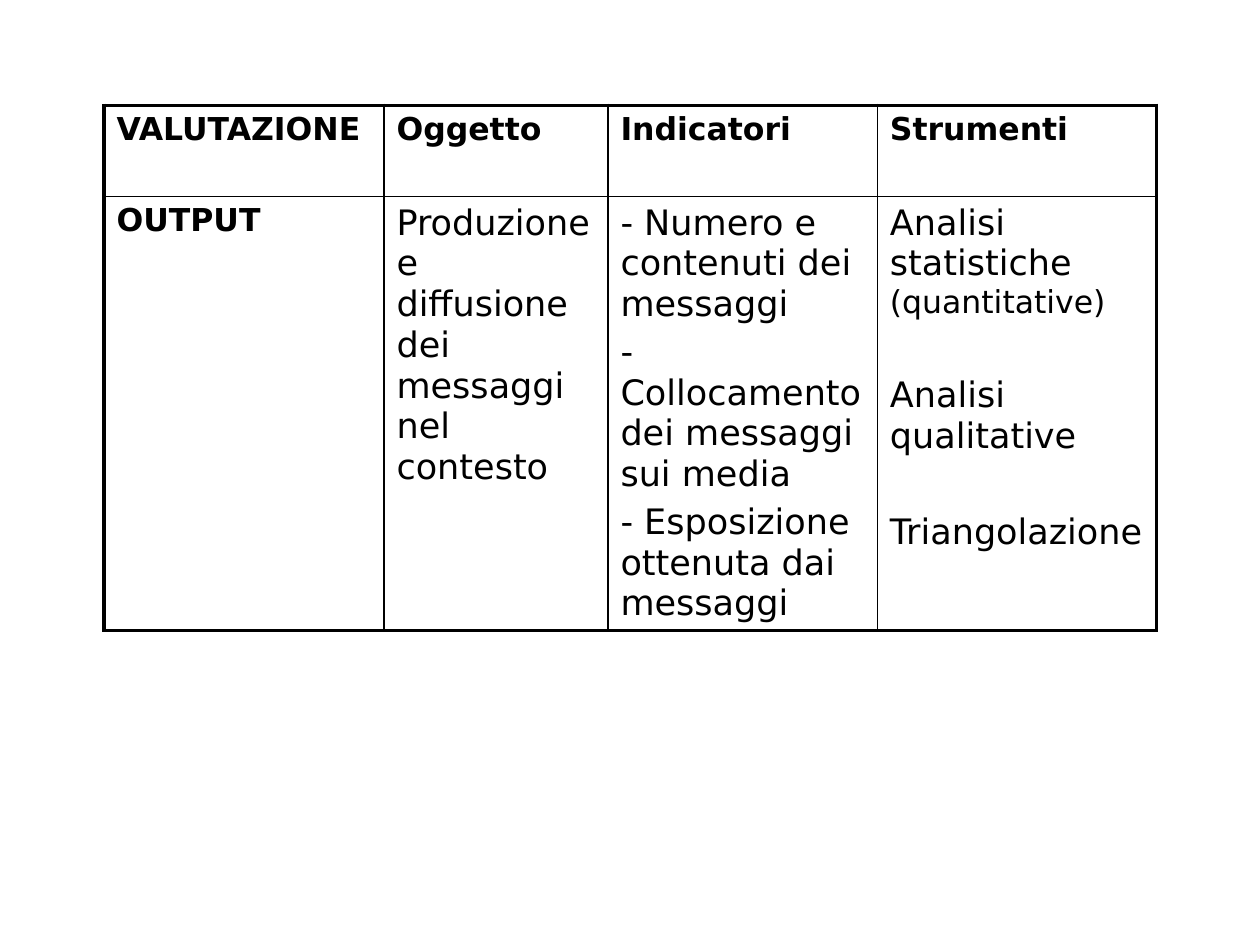
import lxml.etree
import pptx
import pptx.dml.color
import pptx.oxml.ns
import pptx.util

Pt = pptx.util.Pt

COLUMN_WIDTHS = [160, 128, 154, 159.5]
ROW_HEIGHTS = [52, 248]
PARAGRAPH_GAP = 4
SECTION_GAP = 31.28

HEADING = {"size": Pt(18), "bold": True}
BODY = {"size": Pt(20), "bold": False}
SMALL = {"size": Pt(18), "bold": False}

HEADINGS = ["VALUTAZIONE", "Oggetto", "Indicatori", "Strumenti"]
INDICATORS = [
    "- Numero e contenuti dei messaggi",
    "- Collocamento dei messaggi sui media",
    "- Esposizione ottenuta dai messaggi",
]
TOOLS = [
    [("Analisi statistiche ", BODY), ("(quantitative)", SMALL)],
    [("Analisi qualitative", BODY)],
    [("Triangolazione", BODY)],
]


def color(value):
    return pptx.dml.color.RGBColor.from_string(value)


class SlideBuilder:
    font_name = "DejaVu Sans"
    ink = "000000"
    inner_line = 1
    outer_line = 2.25

    def __init__(self, slide):
        self.slide = slide

    def table(self, left, top, widths, heights, rows):
        frame = self.slide.shapes.add_table(
            len(heights), len(widths), Pt(left), Pt(top), Pt(sum(widths)), Pt(sum(heights))
        )
        table = frame.table
        table.first_row = False
        table.horz_banding = False
        for column, width in zip(table.columns, widths):
            column.width = Pt(width)
        for row, height in zip(table.rows, heights):
            row.height = Pt(height)
        last_row, last_column = len(heights) - 1, len(widths) - 1
        for row_index, row in enumerate(rows):
            for column_index, (paragraphs, gap) in enumerate(row):
                cell = table.cell(row_index, column_index)
                outer_edges = {
                    "lnL": column_index == 0,
                    "lnR": column_index == last_column,
                    "lnT": row_index == 0,
                    "lnB": row_index == last_row,
                }
                self.borders(cell, outer_edges)
                cell.fill.background()
                self.text(cell.text_frame, paragraphs, gap)

    def borders(self, cell, outer_edges):
        qn = pptx.oxml.ns.qn
        properties = cell._tc.get_or_add_tcPr()
        for edge, is_outer in outer_edges.items():
            width = self.outer_line if is_outer else self.inner_line
            line = lxml.etree.SubElement(properties, qn(f"a:{edge}"), w=str(Pt(width)))
            fill = lxml.etree.SubElement(line, qn("a:solidFill"))
            lxml.etree.SubElement(fill, qn("a:srgbClr"), val=self.ink)

    def text(self, text_frame, paragraphs, gap):
        for index, runs in enumerate(paragraphs):
            if index == 0:
                paragraph = text_frame.paragraphs[0]
            else:
                paragraph = text_frame.add_paragraph()
                paragraph.space_before = Pt(gap)
            for content, style in runs:
                run = paragraph.add_run()
                run.text = content
                for name, value in {"name": self.font_name, **style}.items():
                    setattr(run.font, name, value)
                run.font.color.rgb = color(self.ink)


def main():
    presentation = pptx.Presentation()
    presentation.slide_width = Pt(720)
    presentation.slide_height = Pt(540)
    slide = presentation.slides.add_slide(presentation.slide_layouts[6])
    heading_row = [([[(heading, HEADING)]], PARAGRAPH_GAP) for heading in HEADINGS]
    output_row = [
        ([[("OUTPUT", HEADING)]], PARAGRAPH_GAP),
        ([[("Produzione e diffusione dei messaggi nel contesto", BODY)]], PARAGRAPH_GAP),
        ([[(indicator, BODY)] for indicator in INDICATORS], PARAGRAPH_GAP),
        (TOOLS, SECTION_GAP),
    ]
    builder = SlideBuilder(slide)
    builder.table(59.4, 60.25, COLUMN_WIDTHS, ROW_HEIGHTS, [heading_row, output_row])
    presentation.save("out.pptx")


if __name__ == "__main__":
    main()
